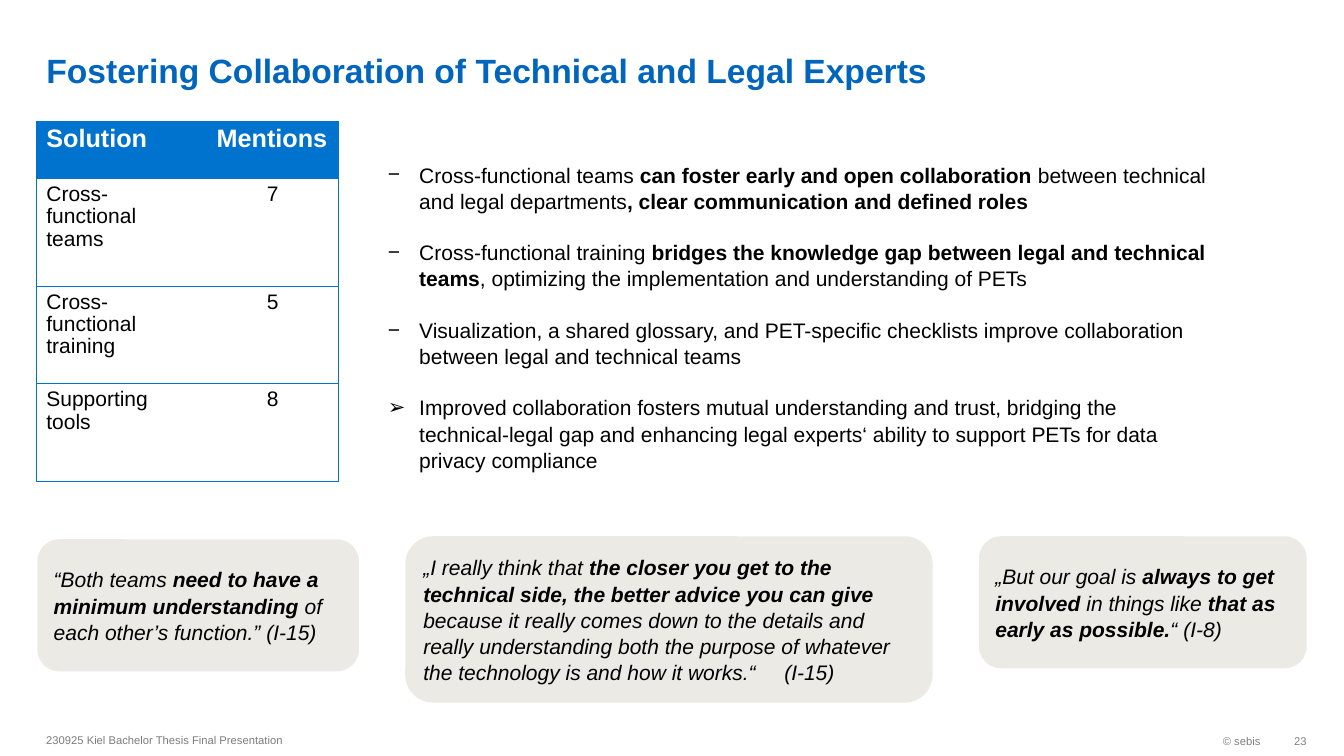
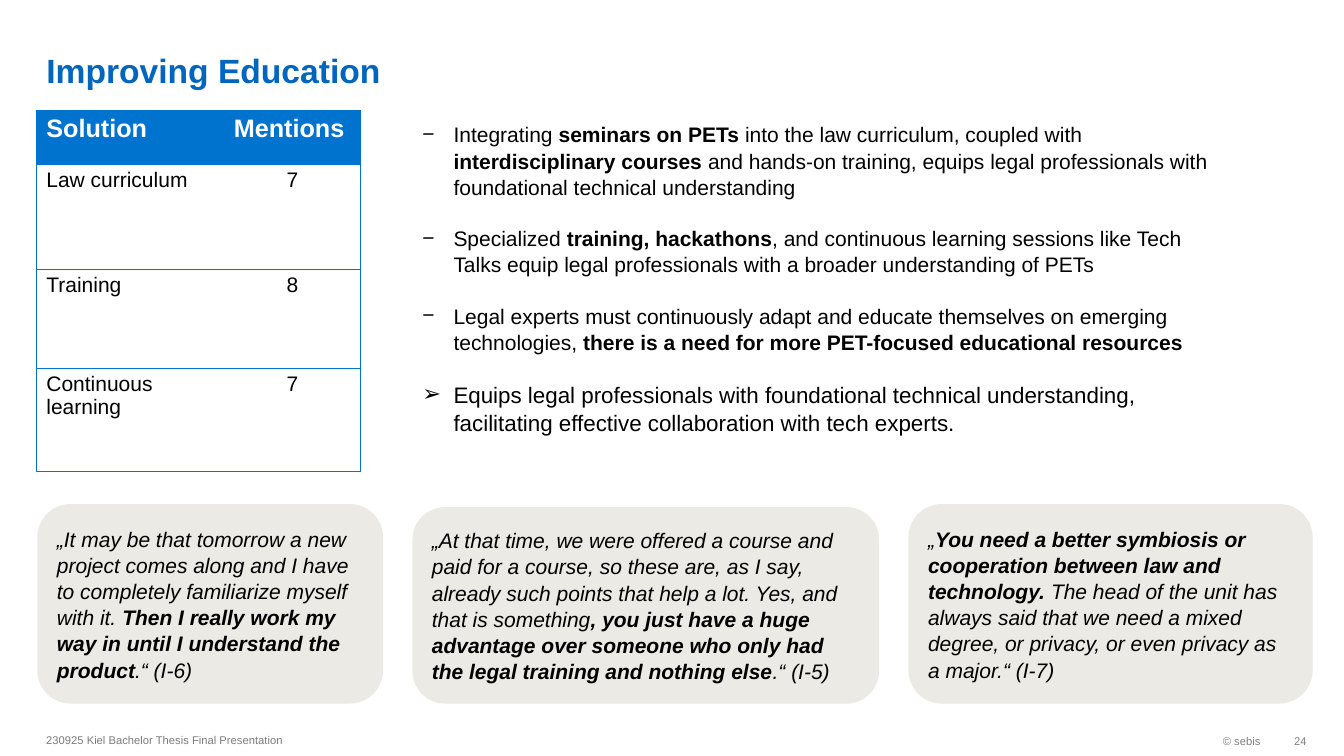
from lxml.etree import SubElement
from pptx import Presentation
from pptx.dml.color import RGBColor
from pptx.enum.shapes import MSO_SHAPE
from pptx.enum.text import MSO_ANCHOR, MSO_AUTO_SIZE, PP_ALIGN
from pptx.oxml.ns import qn
from pptx.util import Inches, Pt

FONT = "Arial"
TITLE, BLUE, SAND = "0065BD", "0073CF", "DAD7CB"
BLACK, WHITE, GREY, DARK_GREY = "000000", "FFFFFF", "808080", "7C7C7C"
BODY, LEADING, INDENT, LEFT = 15, 1.04, 0.31, 0.36
NO_GRID = "{2D5ABB26-0587-4C30-8999-92F81FD0307C}"
FOOTER = "230925 Kiel Bachelor Thesis Final Presentation"
FIRST_PAGE = 23

# Runs alternate between regular and bold.
SLIDES = [
    {
        "title": "Fostering Collaboration of Technical and Legal Experts",
        "table": {
            "top": 1.2, "cols": [1.69, 1.31], "rows": [0.57, 1.07, 0.97, 0.97],
            "cells": [("Solution", "Mentions"), ("Cross-functional teams", "7"),
                      ("Cross-functional training", "5"), ("Supporting tools", "8")],
        },
        "points_at": (3.75, 1.55, 8.37, 3.13),
        "points": [
            ("−", 15, ["Cross-functional teams ",
                       "can foster early and open collaboration ",
                       "between technical and legal departments",
                       ", clear communication and defined roles"]),
            ("−", 15, ["Cross-functional training ",
                       "bridges the knowledge gap between legal and technical teams",
                       ", optimizing the implementation and understanding of PETs"]),
            ("−", 15, ["Visualization, a shared glossary, and PET-specific checklists "
                       "improve collaboration between legal and technical teams"]),
            ("➢", 15, ["Improved collaboration fosters mutual understanding and trust, "
                       "bridging the technical-legal gap and enhancing legal experts‘ "
                       "ability to support PETs for data privacy compliance"]),
        ],
        "quotes": [
            ((0.37, 5.35, 3.19, 1.31),
             ["“Both teams ", "need to have a minimum understanding ",
              "of each other’s function.” (I-15)"]),
            ((4.02, 5.32, 5.23, 1.65),
             ["„I really think that ",
              "the closer you get to the technical side, the better advice you can give ",
              "because it really comes down to the details and really understanding both "
              "the purpose of whatever the technology is and how it works.“\t(I-15)"]),
            ((9.71, 5.32, 3.25, 1.31),
             ["„But our goal is ", "always to get involved ", "in things like ",
              "that as early as possible.", "“ (I-8)"]),
        ],
    },
    {
        "title": "Improving Education",
        "table": {
            "top": 1.1, "cols": [1.86, 1.36], "rows": [0.53, 1.04, 0.99, 1.02],
            "cells": [("Solution", "Mentions"), ("Law curriculum", "7"),
                      ("Training", "8"), ("Continuous learning", "7")],
        },
        "points_at": (4.09, 1.15, 8.1, 3.16),
        "points": [
            ("−", 15, ["Integrating ", "seminars on PETs ",
                       "into the law curriculum, coupled with ",
                       "interdisciplinary courses ",
                       "and hands-on training, equips legal professionals with "
                       "foundational technical understanding"]),
            ("−", 15, ["Specialized ", "training, hackathons",
                       ", and continuous learning sessions like Tech Talks equip legal "
                       "professionals with a broader understanding of PETs"]),
            ("−", 15, ["Legal experts must continuously adapt and educate themselves on "
                       "emerging technologies, ",
                       "there is a need for more PET-focused educational resources"]),
            ("➢", 16, ["Equips legal professionals with foundational technical "
                       "understanding, facilitating effective collaboration with tech "
                       "experts."]),
        ],
        "quotes": [
            ((0.37, 5, 3.43, 1.98),
             ["„It may be that tomorrow a new project comes along and I have to "
              "completely familiarize myself with it. ",
              "Then I really work my way in until I understand the product",
              ".“ (I-6)"]),
            ((4.09, 5.03, 4.63, 1.95),
             ["„At that time, we were offered a course and paid for a course, so these "
              "are, as I say, already such points that help a lot. Yes, and that is "
              "something",
              ", you just have a huge advantage over someone who only had the legal "
              "training and nothing else",
              ".“ (I-5)"]),
            ((9.01, 5, 4.01, 1.98),
             ["„", "You need a better symbiosis or cooperation between law and technology. ",
              "The head of the unit has always said that we need a mixed degree, or "
              "privacy, or even privacy as a major.“ (I-7)"]),
        ],
    },
]


def rgb(value):
    return RGBColor.from_string(value)


def inches(values):
    return [Inches(v) for v in values]


def add_run(p, text, size, color=BLACK, bold=False, italic=False):
    r = p.add_run()
    r.text = text
    f = r.font
    f.name, f.size, f.bold, f.italic = FONT, Pt(size), bold, italic
    f.color.rgb = rgb(color)


def add_runs(p, texts, size, italic=False):
    p.line_spacing = LEADING
    for i, text in enumerate(texts):
        add_run(p, text, size, bold=i % 2 == 1, italic=italic)


def add_title(s, text):
    sp = s.shapes.title
    sp.left, sp.top, sp.width, sp.height = inches((LEFT, 0.11, 11.58, 0.79))
    tf = sp.text_frame
    tf.auto_size = MSO_AUTO_SIZE.NONE
    tf.vertical_anchor = MSO_ANCHOR.BOTTOM
    tf.margin_top = tf.margin_bottom = 0
    p = tf.paragraphs[0]
    p.alignment = PP_ALIGN.LEFT
    add_run(p, text, 24, TITLE, bold=True)


def add_footer(s, page):
    right = PP_ALIGN.RIGHT
    for text, box, color, align, inset in [
        (FOOTER, (LEFT, 7.18, 6.3, 0.32), DARK_GREY, PP_ALIGN.LEFT, 0.1),
        ("© sebis", (10.26, 7.19, 2.34, 0.32), GREY, right, 0.1),
        (str(page), (12.6, 7.19, 0.36, 0.32), GREY, right, 0),
    ]:
        tf = s.shapes.add_textbox(*inches(box)).text_frame
        tf.word_wrap = True
        tf.vertical_anchor = MSO_ANCHOR.MIDDLE
        tf.margin_right = Inches(inset)
        p = tf.paragraphs[0]
        p.alignment = align
        add_run(p, text, 8, color)


def add_border(cell, side):
    ln = SubElement(cell._tc.get_or_add_tcPr(), qn("a:ln" + side), w=str(Pt(0.75)))
    SubElement(SubElement(ln, qn("a:solidFill")), qn("a:srgbClr"), val=BLUE)


def add_mentions(s, top, cols, rows, cells):
    frame = s.shapes.add_table(len(rows), len(cols),
                               *inches((LEFT, top, sum(cols), sum(rows))))
    table = frame.table
    table.horz_banding = False
    table._tbl.tblPr.find(qn("a:tableStyleId")).text = NO_GRID
    for column, width in zip(table.columns, cols):
        column.width = Inches(width)
    for row, height in zip(table.rows, rows):
        row.height = Inches(height)
    for i, texts in enumerate(cells):
        header = i == 0
        for j, text in enumerate(texts):
            cell = table.cell(i, j)
            for side in ("LTB", "RTB")[j]:
                pass
            for side in (("L", "T", "B"), ("R", "T", "B"))[j]:
                add_border(cell, side)
            cell.fill.solid()
            cell.fill.fore_color.rgb = rgb(BLUE if header else WHITE)
            p = cell.text_frame.paragraphs[0]
            p.line_spacing = 0.96
            if j and not header:
                p.alignment = PP_ALIGN.CENTER
            add_run(p, text, 18 if header else BODY, WHITE if header else BLACK, header)


def add_points(s, box, points):
    tf = s.shapes.add_textbox(*inches(box)).text_frame
    tf.word_wrap = True
    for i, (bullet, size, texts) in enumerate(points):
        p = tf.add_paragraph() if i else tf.paragraphs[0]
        pPr = p._p.get_or_add_pPr()
        pPr.set("marL", str(Inches(INDENT)))
        pPr.set("indent", str(-Inches(INDENT)))
        SubElement(pPr, qn("a:buFont"), typeface=FONT)
        SubElement(pPr, qn("a:buChar"), char=bullet)
        if i:
            p.space_before = Pt(18)
        add_runs(p, texts, size)


def add_quote(s, box, texts):
    sp = s.shapes.add_shape(MSO_SHAPE.ROUNDED_RECTANGLE, *inches(box))
    sp.shadow.inherit = False
    sp.line.fill.background()
    sp.fill.solid()
    sp.fill.fore_color.rgb = rgb(SAND)
    color = sp._element.spPr.find(".//" + qn("a:srgbClr"))
    SubElement(color, qn("a:alpha"), val="50000")
    tf = sp.text_frame
    tf.word_wrap = True
    tf.vertical_anchor = MSO_ANCHOR.MIDDLE
    p = tf.paragraphs[0]
    if "\t" in texts[-1]:
        tabs = SubElement(p._p.get_or_add_pPr(), qn("a:tabLst"))
        SubElement(tabs, qn("a:tab"), pos=str(Inches(3.58)), algn="l")
    p.alignment = PP_ALIGN.LEFT
    add_runs(p, texts, BODY, italic=True)


def main():
    prs = Presentation()
    prs.slide_width, prs.slide_height = inches((13.33, 7.5))
    for page, content in enumerate(SLIDES, FIRST_PAGE):
        s = prs.slides.add_slide(prs.slide_layouts[5])
        add_title(s, content["title"])
        add_footer(s, page)
        add_mentions(s, **content["table"])
        add_points(s, content["points_at"], content["points"])
        for box, texts in content["quotes"]:
            add_quote(s, box, texts)
    prs.save("out.pptx")


if __name__ == "__main__":
    main()
